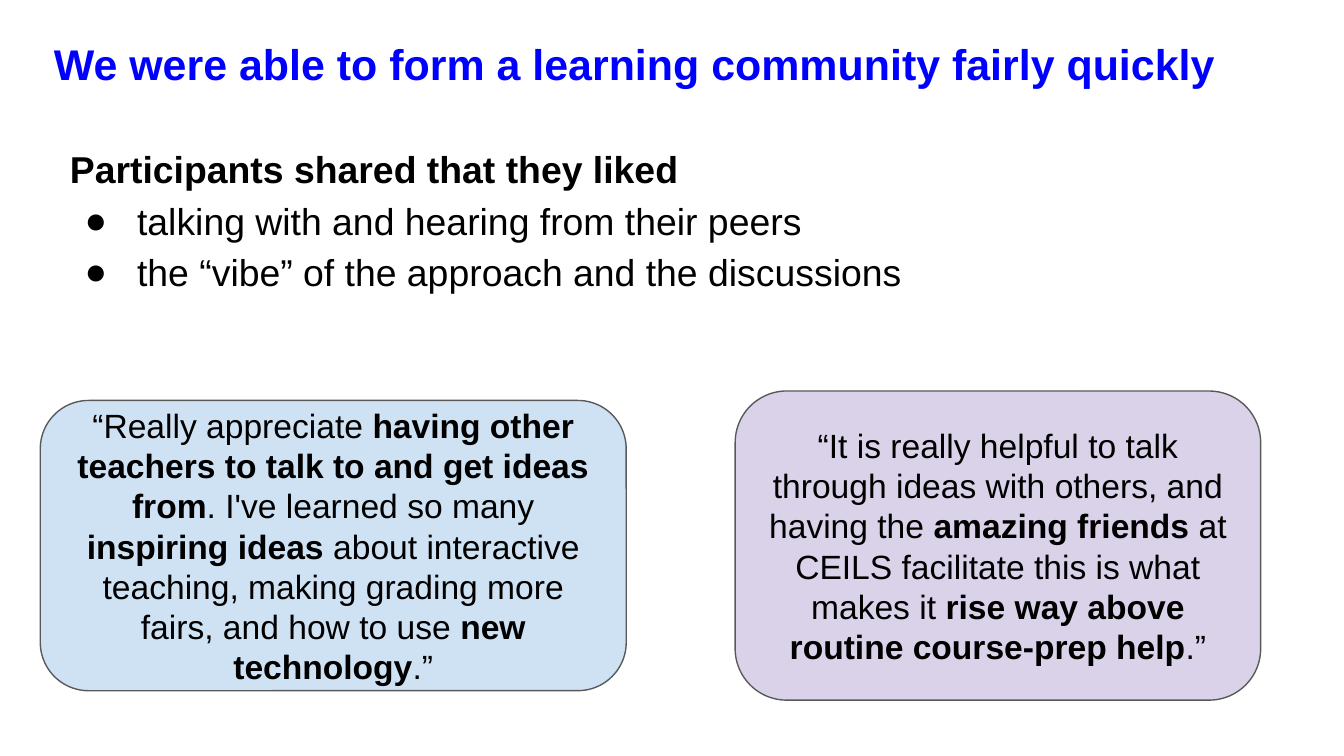
from pptx import Presentation
from pptx.dml.color import RGBColor as Rgb
from pptx.enum.shapes import MSO_SHAPE as Shape
from pptx.enum.text import MSO_ANCHOR as Anchor, MSO_AUTO_SIZE as Fit, PP_ALIGN as Align
from pptx.oxml.ns import qn
from pptx.util import Pt
from lxml.etree import SubElement as Sub

PX = 4572  # EMU per px, 200 px to the inch
HUES = {"title": "0000FF", "text": "000000", "edge": "595959",
        "blue": "CFE2F3", "mauve": "D9D2E9"}
TITLE = "*We were able to form a learning community fairly quickly*"
LEAD = "*Participants shared that they liked*"
LIKES = ["talking with and hearing from their peers",
         "the “vibe” of the approach and the discussions"]
QUOTES = [
    ((60, 596, 872, 432), "blue",
     "“Really appreciate *having other teachers to talk to and get ideas from*. "
     "I've learned so many *inspiring ideas* about interactive teaching, making "
     "grading more fairs, and how to use *new technology*.”"),
    ((1094, 582, 782, 460), "mauve",
     "“It is really helpful to talk through ideas with others, and having the "
     "*amazing friends* at CEILS facilitate this is what makes it "
     "*rise way above routine course-prep help*.”"),
]


def style(item, **vals):
    for name, val in vals.items():
        setattr(item, name, val)


def place(item, box):
    style(item, **dict(zip(("left", "top", "width", "height"), (n * PX for n in box))))


def set_frame(frame, anchor):
    style(frame, word_wrap=True, auto_size=Fit.NONE, vertical_anchor=anchor,
          **{f"margin_{side}": 20 * PX for side in ("left", "top", "right", "bottom")})


def write(para, text, size, hue="text", align=Align.LEFT, gap=1.0):
    """Fill a paragraph; parts between asterisks are bold."""
    style(para, alignment=align, line_spacing=gap, space_before=Pt(0), space_after=Pt(0))
    for i, part in enumerate(text.split("*")):
        if part:
            run = para.add_run()
            run.text = part
            style(run.font, name="Arial", size=Pt(size), bold=i % 2 == 1)
            run.font.color.rgb = Rgb.from_string(HUES[hue])


def set_mark(para, mark=None):
    """Give a paragraph a hanging bullet, or none at all."""
    props = para._p.get_or_add_pPr()
    props.set("marL", str(100 * PX if mark else 0))
    props.set("indent", str(-78 * PX if mark else 0))
    if mark:
        Sub(Sub(props, qn("a:buClr")), qn("a:srgbClr"), val=HUES["text"])
        Sub(props, qn("a:buFont"), typeface="Arial")
        Sub(props, qn("a:buChar"), char=mark)
    else:
        Sub(props, qn("a:buNone"))


def add_title(slide):
    title = slide.shapes.title
    place(title, (60, 36, 1864, 126))
    set_frame(title.text_frame, Anchor.TOP)
    write(title.text_frame.paragraphs[0], TITLE, 23, "title")


def add_list(slide):
    body = slide.placeholders[1]
    place(body, (84, 188, 1816, 826))
    frame = body.text_frame
    set_frame(frame, Anchor.TOP)
    lead = frame.paragraphs[0]
    set_mark(lead)
    write(lead, LEAD, 20, gap=1.15)
    for like in LIKES:
        para = frame.add_paragraph()
        set_mark(para, "●")
        write(para, like, 20, gap=1.15)


def add_quote(slide, box, hue, text):
    card = slide.shapes.add_shape(Shape.ROUNDED_RECTANGLE, *(n * PX for n in box))
    card.shadow.inherit = False
    card.fill.solid()
    card.fill.fore_color.rgb = Rgb.from_string(HUES[hue])
    card.line.color.rgb = Rgb.from_string(HUES["edge"])
    card.line.width = Pt(0.75)
    set_frame(card.text_frame, Anchor.MIDDLE)
    write(card.text_frame.paragraphs[0], text, 18, align=Align.CENTER)


def main():
    deck = Presentation()
    style(deck, slide_width=2000 * PX, slide_height=1125 * PX)
    slide = deck.slides.add_slide(deck.slide_layouts[1])
    add_title(slide)
    add_list(slide)
    for quote in QUOTES:
        add_quote(slide, *quote)
    deck.save("out.pptx")


if __name__ == "__main__":
    main()
